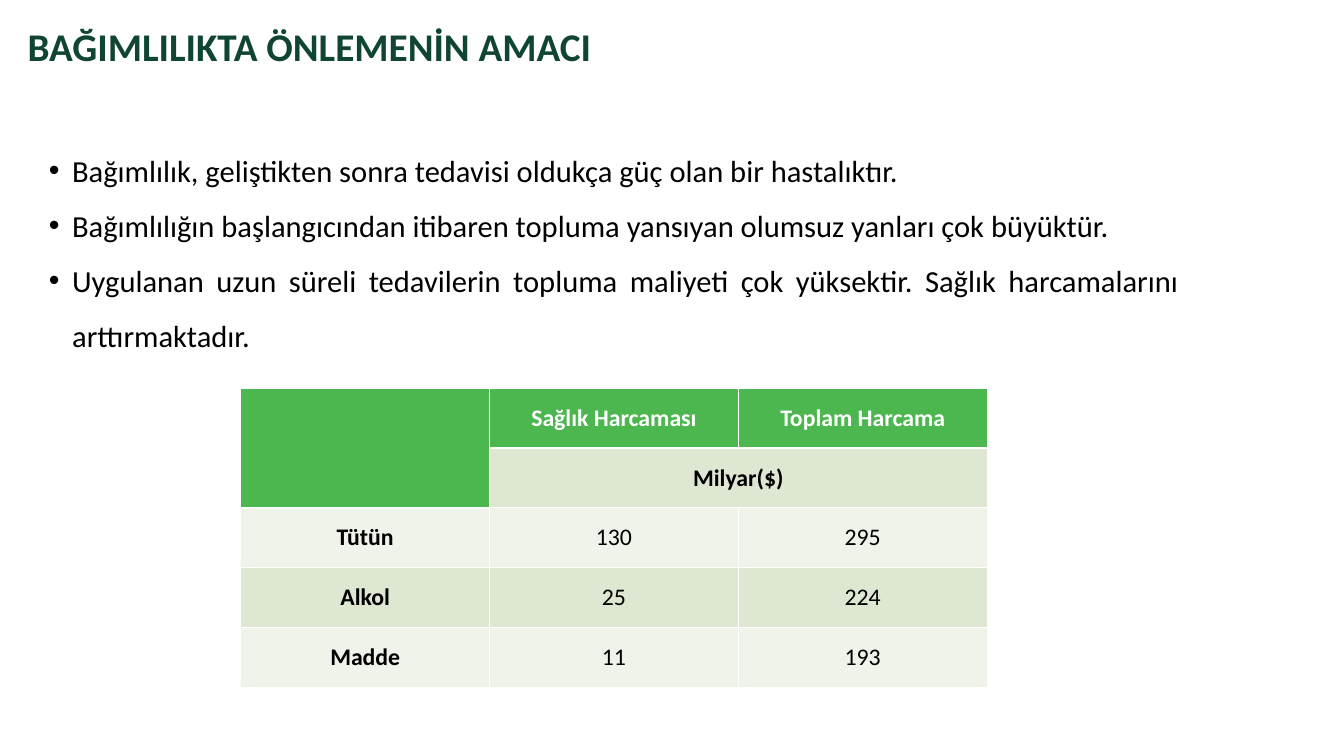
import pptx
import pptx.dml.color
import pptx.enum.text
import pptx.oxml
import pptx.oxml.ns
import pptx.util

PX = 9144
COLORS = {
    "title": "114533",
    "text": "000000",
    "white": "FFFFFF",
    "header": "4BB74E",
    "dark_band": "DEE7D1",
    "light_band": "EFF3EA",
}
BULLETS = [
    "Bağımlılık, geliştikten sonra tedavisi oldukça güç olan bir hastalıktır.",
    "Bağımlılığın başlangıcından itibaren topluma yansıyan olumsuz yanları çok büyüktür.",
    "Uygulanan uzun süreli tedavilerin topluma maliyeti çok yüksektir. "
    "Sağlık harcamalarını arttırmaktadır.",
]
SPENDING = [
    ["", "Sağlık Harcaması", "Toplam Harcama"],
    ["", "Milyar($)", ""],
    ["Tütün", "130", "295"],
    ["Alkol", "25", "224"],
    ["Madde", "11", "193"],
]
ALIGN = pptx.enum.text.PP_ALIGN
ANCHOR = pptx.enum.text.MSO_ANCHOR


class SlideBuilder:
    """Holds the text style and the slide being built."""

    font_name = "Calibri"

    def __init__(self, slide):
        self.slide = slide

    def color(self, name):
        return pptx.dml.color.RGBColor.from_string(COLORS[name])

    def place(self, shape, left, top, width, height):
        shape.left, shape.top = left * PX, top * PX
        shape.width, shape.height = width * PX, height * PX
        text_frame = shape.text_frame
        text_frame.word_wrap = True
        text_frame.auto_size = pptx.enum.text.MSO_AUTO_SIZE.NONE
        text_frame.vertical_anchor = ANCHOR.TOP

    def style(self, paragraph, size, color, alignment, bold=False):
        paragraph.alignment = alignment
        paragraph.font.name = self.font_name
        paragraph.font.size = pptx.util.Pt(size)
        paragraph.font.bold = bold
        paragraph.font.color.rgb = self.color(color)

    def title(self, text, *box):
        shape = self.slide.shapes.title
        self.place(shape, *box)
        shape.text_frame.text = text
        self.style(shape.text_frame.paragraphs[0], 46.2, "title", ALIGN.LEFT, True)

    def bullets(self, items, *box):
        shape = self.slide.placeholders[1]
        self.place(shape, *box)
        shape.text_frame.text = "\n".join(items)
        for paragraph in shape.text_frame.paragraphs:
            properties = paragraph._p.get_or_add_pPr()
            properties.set("marL", str(38 * PX))
            properties.set("indent", str(-38 * PX))
            paragraph.line_spacing = 1.5
            paragraph.space_before = pptx.util.Pt(0)
            self.style(paragraph, 36, "text", ALIGN.JUSTIFY)

    def borders(self, cell, bottom_width):
        properties = cell._tc.get_or_add_tcPr()
        for side, width in (("L", 1), ("R", 1), ("T", 1), ("B", bottom_width)):
            properties.append(pptx.oxml.parse_xml(
                f'<a:ln{side} {pptx.oxml.ns.nsdecls("a")} w="{pptx.util.Pt(width)}">'
                f'<a:solidFill><a:srgbClr val="{COLORS["white"]}"/></a:solidFill>'
                f'</a:ln{side}>'))

    def cell(self, cell, text, fill, color, bold, bottom_width):
        self.borders(cell, bottom_width)
        cell.fill.solid()
        cell.fill.fore_color.rgb = self.color(fill)
        cell.vertical_anchor = ANCHOR.MIDDLE
        cell.margin_left = cell.margin_right = 12 * PX
        cell.margin_top = cell.margin_bottom = 6 * PX
        if text:
            cell.text = text
            self.style(cell.text_frame.paragraphs[0], 28, color, ALIGN.CENTER, bold)

    def table(self, rows, left, top, column_width, row_height):
        row_count, column_count = len(rows), len(rows[0])
        table = self.slide.shapes.add_table(
            row_count, column_count, left * PX, top * PX,
            column_count * column_width * PX, row_count * row_height * PX).table
        for column in table.columns:
            column.width = column_width * PX
        for row_index, row in enumerate(rows):
            table.rows[row_index].height = row_height * PX
            band = "dark_band" if row_index % 2 else "light_band"
            for column_index, text in enumerate(row):
                header = row_index == 0 or (row_index == 1 and column_index == 0)
                self.cell(
                    table.cell(row_index, column_index), text,
                    "header" if header else band,
                    "white" if header else "text",
                    row_index < 2 or column_index == 0,
                    3 if header else 1)
        table.cell(0, 0).merge(table.cell(1, 0))
        table.cell(1, 1).merge(table.cell(1, 2))


def main():
    presentation = pptx.Presentation()
    presentation.slide_width = 2199 * PX
    presentation.slide_height = 1237 * PX
    slide = presentation.slides.add_slide(presentation.slide_layouts[1])
    builder = SlideBuilder(slide)
    builder.title("BAĞIMLILIKTA ÖNLEMENİN AMACI", 35, 31, 1745, 88)
    builder.bullets(BULLETS, 70, 213, 1869, 546)
    builder.table(SPENDING, 394, 635, 407, 98)
    presentation.save("out.pptx")


if __name__ == "__main__":
    main()
